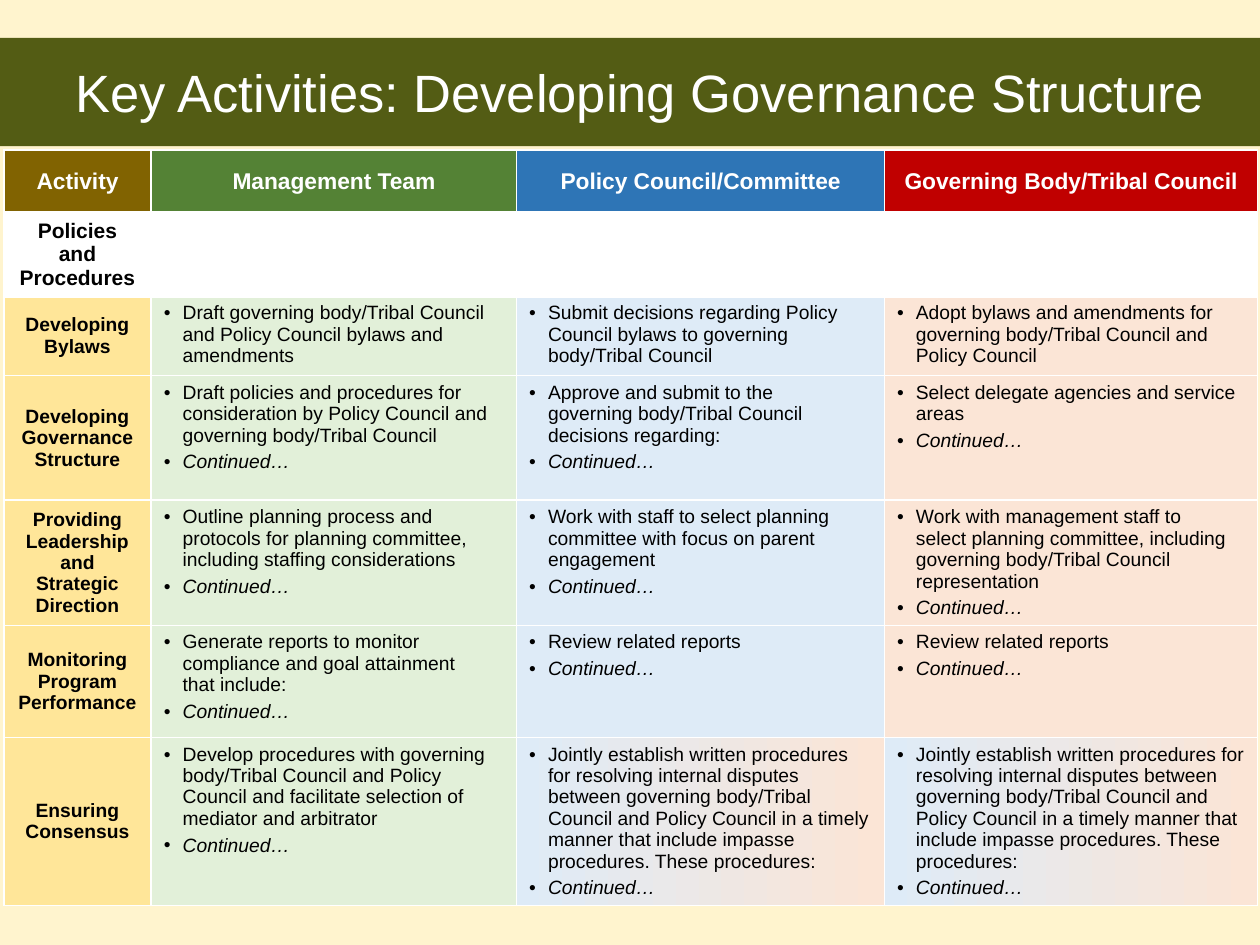
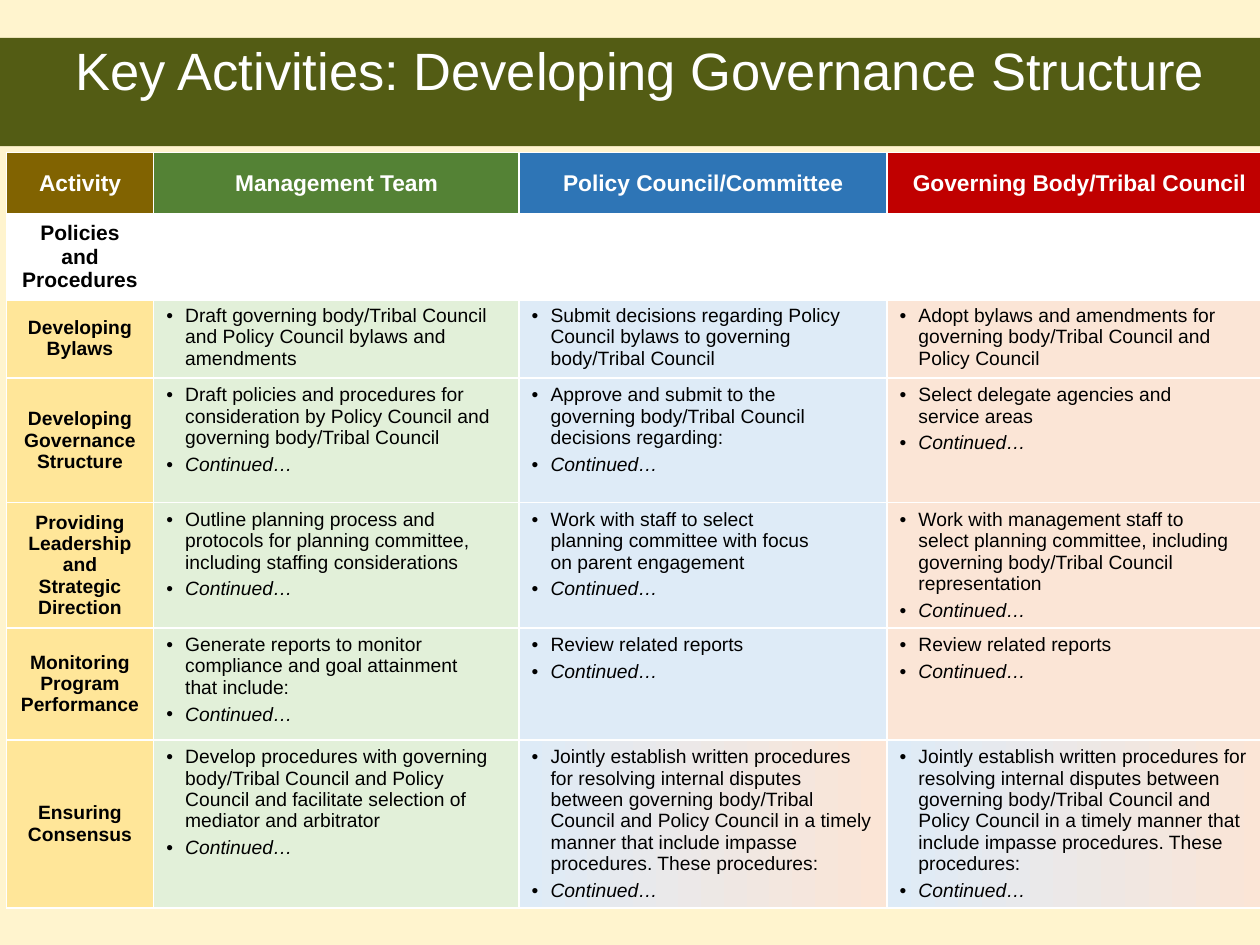
from dataclasses import dataclass, field

from pptx import Presentation
from pptx.dml.color import RGBColor
from pptx.enum.text import MSO_ANCHOR, MSO_AUTO_SIZE, PP_ALIGN
from pptx.oxml.ns import qn
from pptx.util import Inches, Length, Pt
from lxml import etree

MIDDLE, TOP = MSO_ANCHOR.MIDDLE, MSO_ANCHOR.TOP
CENTER, LEFT = PP_ALIGN.CENTER, PP_ALIGN.LEFT
NO_AUTOFIT = MSO_AUTO_SIZE.NONE

# Shared style
FONT = "Arial"
WHITE = RGBColor(0xFF, 0xFF, 0xFF)
BLACK = RGBColor(0x00, 0x00, 0x00)
CREAM = RGBColor(0xFF, 0xF4, 0xCE)
OLIVE = RGBColor(0x53, 0x5C, 0x14)
BROWN = RGBColor(0x81, 0x63, 0x01)
GREEN = RGBColor(0x54, 0x82, 0x35)
BLUE = RGBColor(0x2E, 0x75, 0xB6)
RED = RGBColor(0xC0, 0x00, 0x00)
YELLOW = RGBColor(0xFF, 0xE6, 0x99)
PALE_GREEN = RGBColor(0xE2, 0xF0, 0xD9)
PALE_BLUE = RGBColor(0xDE, 0xEB, 0xF7)
PALE_ORANGE = RGBColor(0xFB, 0xE5, 0xD6)

TITLE = "Key Activities: Developing Governance Structure"
CONTINUED = "Continued…"
ROW_HEIGHTS = (0.5, 0.3, 0.63, 0.99, 0.99, 0.89, 0.99)
TABLE_HEIGHT = Inches(6.23)
THIN, THICK = Pt(1), Pt(3)


@dataclass(frozen=True)
class Column:
    heading: str
    header_fill: RGBColor
    body_fill: RGBColor


@dataclass(frozen=True)
class Activity:
    name: tuple[str, ...]
    duties: tuple[str, str, str]
    continued: bool = True
    joint: bool = False


@dataclass(frozen=True)
class ActivitySlide:
    left: float
    top: float
    widths: tuple[float, ...]
    title_anchor: MSO_ANCHOR
    line_breaks: dict[str, str] = field(default_factory=dict)


COLUMNS = (
    Column("Activity", BROWN, YELLOW),
    Column("Management Team", GREEN, PALE_GREEN),
    Column("Policy Council/Committee", BLUE, PALE_BLUE),
    Column("Governing Body/Tribal Council", RED, PALE_ORANGE),
)

JOINT_DUTY = (
    "Jointly establish written procedures for resolving internal disputes between "
    "governing body/Tribal Council and Policy Council in a timely manner that "
    "include impasse procedures. These procedures:"
)

ACTIVITIES = (
    Activity(("Developing Bylaws",), (
        "Draft governing body/Tribal Council and Policy Council bylaws and amendments",
        "Submit decisions regarding Policy Council bylaws to governing body/Tribal Council",
        "Adopt bylaws and amendments for governing body/Tribal Council and Policy Council",
    ), continued=False),
    Activity(("Developing Governance", "Structure"), (
        "Draft policies and procedures for consideration by Policy Council and "
        "governing body/Tribal Council",
        "Approve and submit to the\ngoverning body/Tribal Council decisions regarding:",
        "Select delegate agencies and service areas",
    )),
    Activity(("Providing Leadership\nand Strategic Direction",), (
        "Outline planning process and protocols for planning committee, "
        "including staffing considerations",
        "Work with staff to select planning committee with focus on parent engagement",
        "Work with management staff to\nselect planning committee, including "
        "governing body/Tribal Council representation",
    )),
    Activity(("Monitoring Program Performance",), (
        "Generate reports to monitor compliance and goal attainment\nthat include:",
        "Review related reports",
        "Review related reports",
    )),
    Activity(("Ensuring Consensus",), (
        "Develop procedures with governing body/Tribal Council and Policy Council "
        "and facilitate selection of mediator and arbitrator",
        JOINT_DUTY,
        JOINT_DUTY,
    ), joint=True),
)

SLIDES = (
    ActivitySlide(0.03, 1.19, (1.17, 2.9, 2.92, 2.96), MIDDLE),
    ActivitySlide(0.05, 1.21, (1.17, 2.9, 2.92, 3.05), TOP, {
        "agencies and service": "agencies and\nservice",
        "select planning committee with focus on":
            "select\nplanning committee with focus\non",
    }),
)


def set_font(paragraph, size: float, color: RGBColor, bold: bool = False,
             italic: bool = False) -> None:
    font = paragraph.font
    font.name, font.size = FONT, Pt(size)
    font.bold, font.italic = bold, italic
    font.color.rgb = color


def set_indent(paragraph, left: float, first_line: float):
    properties = paragraph._p.get_or_add_pPr()
    properties.set("marL", str(Inches(left)))
    properties.set("indent", str(Inches(first_line)))
    return properties


def set_borders(cell, top: Length, bottom: Length) -> None:
    """Draw white cell borders; they must come before the cell fill."""
    properties = cell._tc.get_or_add_tcPr()
    for side, width in (("L", THIN), ("R", THIN), ("T", top), ("B", bottom)):
        line = etree.SubElement(properties, qn(f"a:ln{side}"), w=str(width))
        fill = etree.SubElement(line, qn("a:solidFill"))
        etree.SubElement(fill, qn("a:srgbClr"), val=str(WHITE))


def fill_solid(cell, color: RGBColor) -> None:
    cell.fill.solid()
    cell.fill.fore_color.rgb = color


def fill_joint(cell) -> None:
    cell.fill.gradient()
    cell.fill.gradient_angle = 0
    stops = zip(cell.fill.gradient_stops, ((0, PALE_BLUE), (0.99, PALE_ORANGE)))
    for stop, (position, color) in stops:
        stop.position = position
        stop.color.rgb = color


def add_paragraphs(cell, texts: tuple[str, ...]) -> list:
    frame = cell.text_frame
    paragraphs = [frame.paragraphs[0]] + [frame.add_paragraph() for _ in texts[1:]]
    for paragraph, text in zip(paragraphs, texts):
        paragraph.text = text
    return paragraphs


def write_label(cell, texts: tuple[str, ...], size: float, color: RGBColor) -> None:
    cell.vertical_anchor = MIDDLE
    for paragraph in add_paragraphs(cell, texts):
        paragraph.alignment = CENTER
        set_font(paragraph, size, color, bold=True)


def write_duty(cell, duty: str, continued: bool) -> None:
    texts = (duty, CONTINUED) if continued else (duty,)
    for index, paragraph in enumerate(add_paragraphs(cell, texts)):
        if continued and index == 0:
            paragraph.space_after = Pt(3)
        properties = set_indent(paragraph, 0.15, -0.15)
        etree.SubElement(properties, qn("a:buFont"), typeface=FONT)
        etree.SubElement(properties, qn("a:buChar"), char="•")
        set_font(paragraph, 11, BLACK, italic=index > 0)


def add_title(slide, anchor: MSO_ANCHOR) -> None:
    title = slide.shapes.title
    title.left, title.top = Inches(0), Inches(0.3)
    title.width, title.height = Inches(10), Inches(0.86)
    title.fill.solid()
    title.fill.fore_color.rgb = OLIVE
    frame = title.text_frame
    frame.word_wrap, frame.auto_size = True, NO_AUTOFIT
    frame.vertical_anchor = anchor
    if anchor == TOP:
        frame.margin_top = Inches(0)
    paragraph = frame.paragraphs[0]
    paragraph.text = TITLE
    paragraph.alignment = LEFT
    set_indent(paragraph, 0, 0.5)
    set_font(paragraph, 30, WHITE)


def add_activity_table(slide, layout: ActivitySlide) -> None:
    frame = slide.shapes.add_table(
        len(ROW_HEIGHTS), len(COLUMNS), Inches(layout.left), Inches(layout.top),
        Inches(sum(layout.widths)), TABLE_HEIGHT)
    table = frame.table
    table.horz_banding = False
    for column, width in zip(table.columns, layout.widths):
        column.width = Inches(width)
    for row, height in zip(table.rows, ROW_HEIGHTS):
        row.height = Inches(height)
    frame.height = TABLE_HEIGHT

    # Thick rules frame the section row
    for row_index, row in enumerate(table.rows):
        for cell in row.cells:
            set_borders(cell, THICK if row_index in (1, 2) else THIN,
                        THICK if row_index in (0, 1) else THIN)

    # Header and section rows
    for index, column in enumerate(COLUMNS):
        header = table.cell(0, index)
        write_label(header, (column.heading,), 13, WHITE)
        fill_solid(header, column.header_fill)
        fill_solid(table.cell(1, index), WHITE)
    write_label(table.cell(1, 0), ("Policies and Procedures",), 12, BLACK)

    # Activity rows
    for row_index, activity in enumerate(ACTIVITIES, start=2):
        write_label(table.cell(row_index, 0), activity.name, 11, BLACK)
        for index, duty in enumerate(activity.duties, start=1):
            for text, broken_text in layout.line_breaks.items():
                duty = duty.replace(text, broken_text)
            write_duty(table.cell(row_index, index), duty, activity.continued)
        for index, column in enumerate(COLUMNS):
            cell = table.cell(row_index, index)
            if activity.joint and index >= 2:
                fill_joint(cell)
            else:
                fill_solid(cell, column.body_fill)


def main() -> None:
    presentation = Presentation()
    presentation.slide_width, presentation.slide_height = Inches(10), Inches(7.5)
    background = presentation.slide_master.background.fill
    background.solid()
    background.fore_color.rgb = CREAM
    title_only = presentation.slide_layouts[5]
    for layout in SLIDES:
        slide = presentation.slides.add_slide(title_only)
        add_title(slide, layout.title_anchor)
        add_activity_table(slide, layout)
    presentation.save("out.pptx")


if __name__ == "__main__":
    main()
